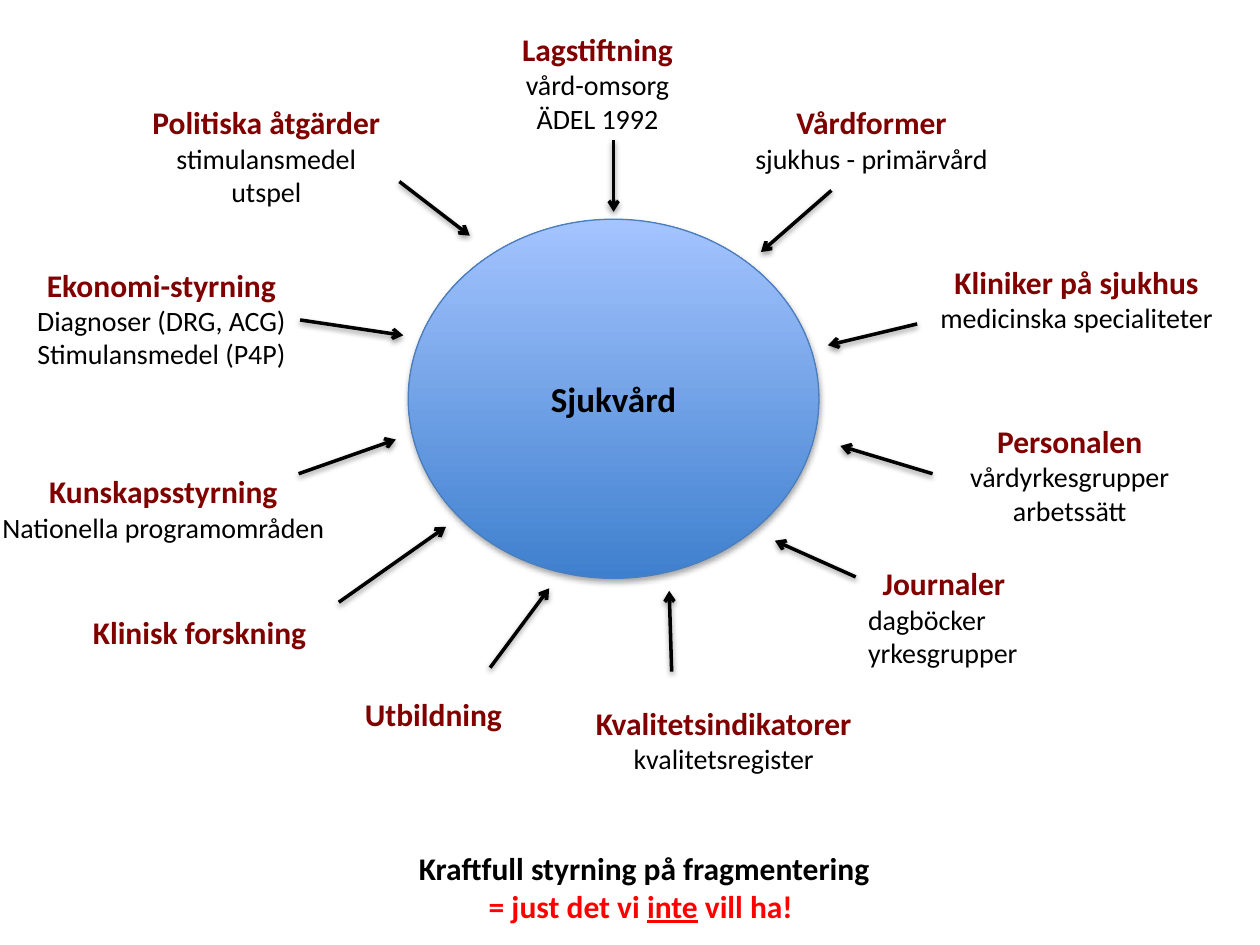
from dataclasses import dataclass

from pptx import Presentation
from pptx.dml.color import RGBColor
from pptx.enum import shapes, text
from pptx.oxml import parse_xml
from pptx.oxml.ns import nsdecls, qn
from pptx.shapes.autoshape import Shape
from pptx.shapes.connector import Connector
from pptx.slide import Slide
from pptx.text.text import Font
from pptx.util import Cm, Pt

FONT = "Calibri"
BLACK, MAROON, RED = "000000", "800000", "FF0000"
CENTER, LEFT = text.PP_ALIGN.CENTER, text.PP_ALIGN.LEFT


@dataclass
class Topic:
    """A heading with details, and the arrow from it; lengths in cm."""
    heading: str
    details: list[str]
    left: float
    top: float
    width: float
    arrow: tuple[float, float, float, float]
    detail_alignment: text.PP_ALIGN = CENTER


TOPICS = [
    Topic("Lagstiftning", ["vård-omsorg", "ÄDEL 1992"],
          10.24, 0.48, 3.61, (12.37, 2.82, 12.37, 4.27)),
    Topic("Vårdformer", ["sjukhus - primärvård"],
          14.94, 1.96, 5.26, (16.76, 3.84, 15.34, 5.08)),
    Topic("Kliniker på sjukhus", ["medicinska specialiteter"],
          18.67, 5.18, 6.07, (18.49, 6.53, 16.69, 6.96)),
    Topic("Personalen", ["vårdyrkesgrupper", "arbetssätt"],
          19.28, 8.38, 4.57, (18.8, 9.55, 16.94, 8.99)),
    Topic("Journaler", ["dagböcker", "yrkesgrupper"],
          17.25, 11.25, 3.56, (17.25, 11.63, 15.62, 10.9), LEFT),
    Topic("Kvalitetsindikatorer", ["kvalitetsregister"],
          11.73, 14.07, 5.72, (13.54, 13.54, 13.49, 11.91)),
    Topic("Utbildning", [], 7.09, 13.89, 3.3, (9.88, 13.46, 11.07, 11.86)),
    Topic("Klinisk forskning", [], 1.6, 12.24, 4.85, (6.83, 12.14, 8.99, 10.62)),
    Topic("Kunskapsstyrning", ["Nationella programområden"],
          -0.25, 9.4, 7.09, (6.02, 9.55, 7.98, 8.86)),
    Topic("Ekonomi-styrning", ["Diagnoser (DRG, ACG)", "Stimulansmedel (P4P)"],
          0.46, 5.23, 5.59, (6.05, 6.45, 8.13, 6.76)),
    Topic("Politiska åtgärder", ["stimulansmedel", "utspel"],
          2.79, 1.96, 5.16, (8.05, 3.66, 9.47, 4.75)),
]


def rgb(color: str) -> RGBColor:
    return RGBColor.from_string(color)


def set_font(font: Font, size: float, color: str, bold: bool) -> None:
    font.name, font.size, font.bold = FONT, Pt(size), bold
    font.color.rgb = rgb(color)


def add_shadow(shape: Shape | Connector, distance: int, opacity: int) -> None:
    """Add a soft shadow straight below; distance in EMU, opacity in percent."""
    shape.element.spPr.append(parse_xml(
        f'<a:effectLst {nsdecls("a")}>'
        f'<a:outerShdw blurRad="40000" dist="{distance}" dir="5400000" rotWithShape="0">'
        f'<a:srgbClr val="{BLACK}"><a:alpha val="{opacity * 1000}"/></a:srgbClr>'
        '</a:outerShdw></a:effectLst>'))


def add_text_box(slide: Slide, left: float, top: float, width: float,
                 height: float) -> text.MSO_AUTO_SIZE:
    box = slide.shapes.add_textbox(Cm(left), Cm(top), Cm(width), Cm(height))
    frame = box.text_frame
    frame.word_wrap = False
    frame.auto_size = text.MSO_AUTO_SIZE.SHAPE_TO_FIT_TEXT
    return frame


def add_arrow(slide: Slide, ends: tuple[float, float, float, float]) -> None:
    arrow = slide.shapes.add_connector(
        shapes.MSO_CONNECTOR.STRAIGHT, *(Cm(end) for end in ends))
    arrow.line.color.rgb = rgb(BLACK)
    arrow.line.width = Pt(2)
    arrow.element.spPr.find(qn("a:ln")).append(
        parse_xml(f'<a:tailEnd {nsdecls("a")} type="arrow"/>'))
    add_shadow(arrow, 20000, 38)


def add_topic(slide: Slide, topic: Topic) -> None:
    height = 1.02 + 0.68 * len(topic.details)
    frame = add_text_box(slide, topic.left, topic.top, topic.width, height)
    heading = frame.paragraphs[0]
    heading.text = topic.heading
    heading.alignment = CENTER
    set_font(heading.font, 18, MAROON, True)
    for detail in topic.details:
        paragraph = frame.add_paragraph()
        paragraph.text = detail
        paragraph.alignment = topic.detail_alignment
        set_font(paragraph.font, 16, BLACK, False)
    add_arrow(slide, topic.arrow)


def add_hub(slide: Slide) -> None:
    hub = slide.shapes.add_shape(
        shapes.MSO_SHAPE.OVAL, Cm(8.23), Cm(4.42), Cm(8.28), Cm(7.24))
    hub.fill.gradient()
    hub.fill.gradient_angle = 90
    for stop, color in zip(hub.fill.gradient_stops, ("3F80CE", "A4C4FF")):
        stop.color.rgb = rgb(color)
    hub.line.color.rgb = rgb("4B7EBC")
    hub.line.width = Pt(0.75)
    add_shadow(hub, 23000, 35)
    hub.text_frame.vertical_anchor = text.MSO_ANCHOR.MIDDLE
    label = hub.text_frame.paragraphs[0]
    label.text = "Sjukvård"
    label.alignment = CENTER
    set_font(label.font, 20, BLACK, True)


def add_conclusion(slide: Slide) -> None:
    frame = add_text_box(slide, 8.15, 16.99, 9.68, 1.8)
    claim, verdict = frame.paragraphs[0], frame.add_paragraph()
    claim.text = "Kraftfull styrning på fragmentering"
    for part in ("= just det vi ", "inte", " vill ha! "):
        run = verdict.add_run()
        run.text = part
        if part == "inte":
            run.font.underline = True
    for paragraph, color in ((claim, BLACK), (verdict, RED)):
        paragraph.alignment = CENTER
        set_font(paragraph.font, 18, color, True)


def main() -> None:
    presentation = Presentation()
    presentation.slide_width, presentation.slide_height = Cm(25.4), Cm(19.05)
    slide = presentation.slides.add_slide(presentation.slide_layouts[6])
    add_hub(slide)
    for topic in TOPICS:
        add_topic(slide, topic)
    add_conclusion(slide)
    presentation.save("out.pptx")


if __name__ == "__main__":
    main()
